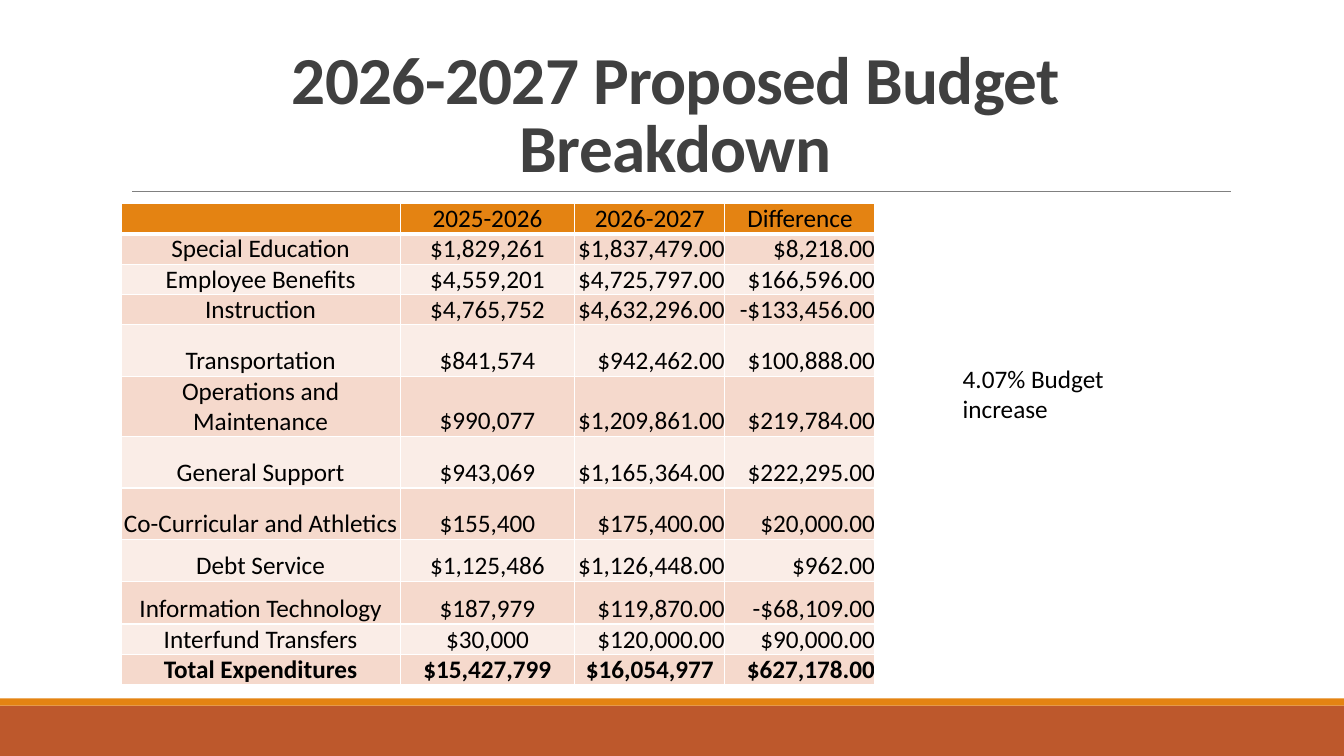
from lxml import etree
from pptx import Presentation
from pptx.dml.color import RGBColor
from pptx.enum import shapes, text
from pptx.oxml import ns
from pptx.util import Inches, Pt

COLORS = {
    "orange": "E48312", "rust": "BD582C", "rule": "808080", "title": "404040",
    "text": "000000", "band_dark": "F5D9CC", "band_light": "FAEDE7", "border": "FFFFFF",
}
FONT = "Calibri"
CENTER, RIGHT = text.PP_ALIGN.CENTER, text.PP_ALIGN.RIGHT

COLUMN_WIDTHS = [2.77, 1.73, 1.49, 1.49]
BUDGET_ROWS = [  # height, then the four cells
    (0.28, "", "2025-2026", "2026-2027", "Difference"),
    (0.28, "Special Education", "$1,829,261", "$1,837,479.00", "$8,218.00"),
    (0.28, "Employee Benefits", "$4,559,201", "$4,725,797.00", "$166,596.00"),
    (0.28, "Instruction", "$4,765,752", "$4,632,296.00", "-$133,456.00"),
    (0.51, "Transportation", "$841,574", "$942,462.00", "$100,888.00"),
    (0.42, "Operations and Maintenance", "$990,077", "$1,209,861.00", "$219,784.00"),
    (0.51, "General Support", "$943,069", "$1,165,364.00", "$222,295.00"),
    (0.51, "Co-Curricular and Athletics", "$155,400", "$175,400.00", "$20,000.00"),
    (0.42, "Debt Service", "$1,125,486", "$1,126,448.00", "$962.00"),
    (0.42, "Information Technology", "$187,979", "$119,870.00", "-$68,109.00"),
    (0.28, "Interfund Transfers", "$30,000", "$120,000.00", "$90,000.00"),
    (0.28, "Total Expenditures", "$15,427,799", "$16,054,977", "$627,178.00"),
]


def rgb(name):
    return RGBColor.from_string(COLORS[name])


def style_font(para, size, color="text", bold=False):
    font = para.font
    font.name, font.size, font.bold = FONT, Pt(size), bold
    font.color.rgb = rgb(color)


def add_text(page, box, words):
    frame = page.shapes.add_textbox(*map(Inches, box)).text_frame
    frame.word_wrap = True
    para = frame.paragraphs[0]
    para.text = words
    return frame, para


def add_footer(page, left, top, width, height):
    stripe = 0.07
    bands = [("rust", top + stripe, height - stripe), ("orange", top, stripe)]
    for color, band_top, band_height in bands:
        band = page.shapes.add_shape(
            shapes.MSO_SHAPE.RECTANGLE,
            *map(Inches, (left, band_top, width, band_height)))
        band.shadow.inherit = False
        band.fill.solid()
        band.fill.fore_color.rgb = rgb(color)
        band.line.fill.background()


def add_title(page, left, top, width, height):
    # Rule under the title
    bottom = top + height
    rule = page.shapes.add_connector(
        shapes.MSO_CONNECTOR.STRAIGHT,
        *map(Inches, (left + 0.11, bottom, left + width + 0.01, bottom)))
    rule.line.color.rgb = rgb("rule")
    rule.line.width = Pt(0.5)
    etree.SubElement(rule._element.spPr, ns.qn("a:effectLst"))

    # Heading
    frame, para = add_text(page, (left, top, width, height),
                           "2026-2027 Proposed Budget Breakdown")
    frame.vertical_anchor = text.MSO_ANCHOR.BOTTOM
    para.alignment, para.line_spacing = CENTER, 0.85
    style_font(para, 48, "title", bold=True)
    para.runs[0]._r.get_or_add_rPr().set("spc", "-50")


def set_borders(cell, top, bottom):
    properties = cell._tc.get_or_add_tcPr()
    for side, points in (("L", 1), ("R", 1), ("T", top), ("B", bottom)):
        line = etree.SubElement(properties, ns.qn(f"a:ln{side}"), w=str(Pt(points)))
        fill = etree.SubElement(line, ns.qn("a:solidFill"))
        etree.SubElement(fill, ns.qn("a:srgbClr"), val=COLORS["border"])


def fill_cell(cell, words, row, column):
    header, total = row == 0, row == len(BUDGET_ROWS) - 1
    set_borders(cell, top=3 if row == 1 else 1, bottom=3 if header else 1)
    cell.fill.solid()
    band = "band_dark" if row % 2 else "band_light"
    cell.fill.fore_color.rgb = rgb("orange" if header else band)
    cell.margin_left = cell.margin_right = cell.margin_top = cell.margin_bottom = 0
    cell.vertical_anchor = text.MSO_ANCHOR.BOTTOM
    para = cell.text_frame.paragraphs[0]
    if words:
        para.text = words
    centered = header or column < 2 or (total and column == 2)
    para.alignment = CENTER if centered else RIGHT
    style_font(para, 18, bold=total)


def add_budget_table(page, left, top):
    size = (sum(COLUMN_WIDTHS), sum(row[0] for row in BUDGET_ROWS))
    table = page.shapes.add_table(len(BUDGET_ROWS), len(COLUMN_WIDTHS),
                                  *map(Inches, (left, top, *size))).table
    table.first_row = table.horz_banding = False
    for column, width in zip(table.columns, COLUMN_WIDTHS):
        column.width = Inches(width)
    for row, (height, *values) in enumerate(BUDGET_ROWS):
        table.rows[row].height = Inches(height)
        for column, words in enumerate(values):
            fill_cell(table.cell(row, column), words, row, column)


def add_increase_note(page, left, top, width, height):
    _, para = add_text(page, (left, top, width, height), "4.07% Budget increase")
    style_font(para, 18)


def main():
    deck = Presentation()
    deck.slide_width, deck.slide_height = Inches(13.33), Inches(7.5)
    page = deck.slides.add_slide(deck.slide_layouts[6])
    add_footer(page, 0, 6.93, 13.33, 0.57)
    add_title(page, 1.2, 0.31, 11, 1.59)
    add_budget_table(page, 1.2, 2.02)
    add_increase_note(page, 9.45, 3.55, 1.9, 0.71)
    deck.save("out.pptx")


if __name__ == "__main__":
    main()
